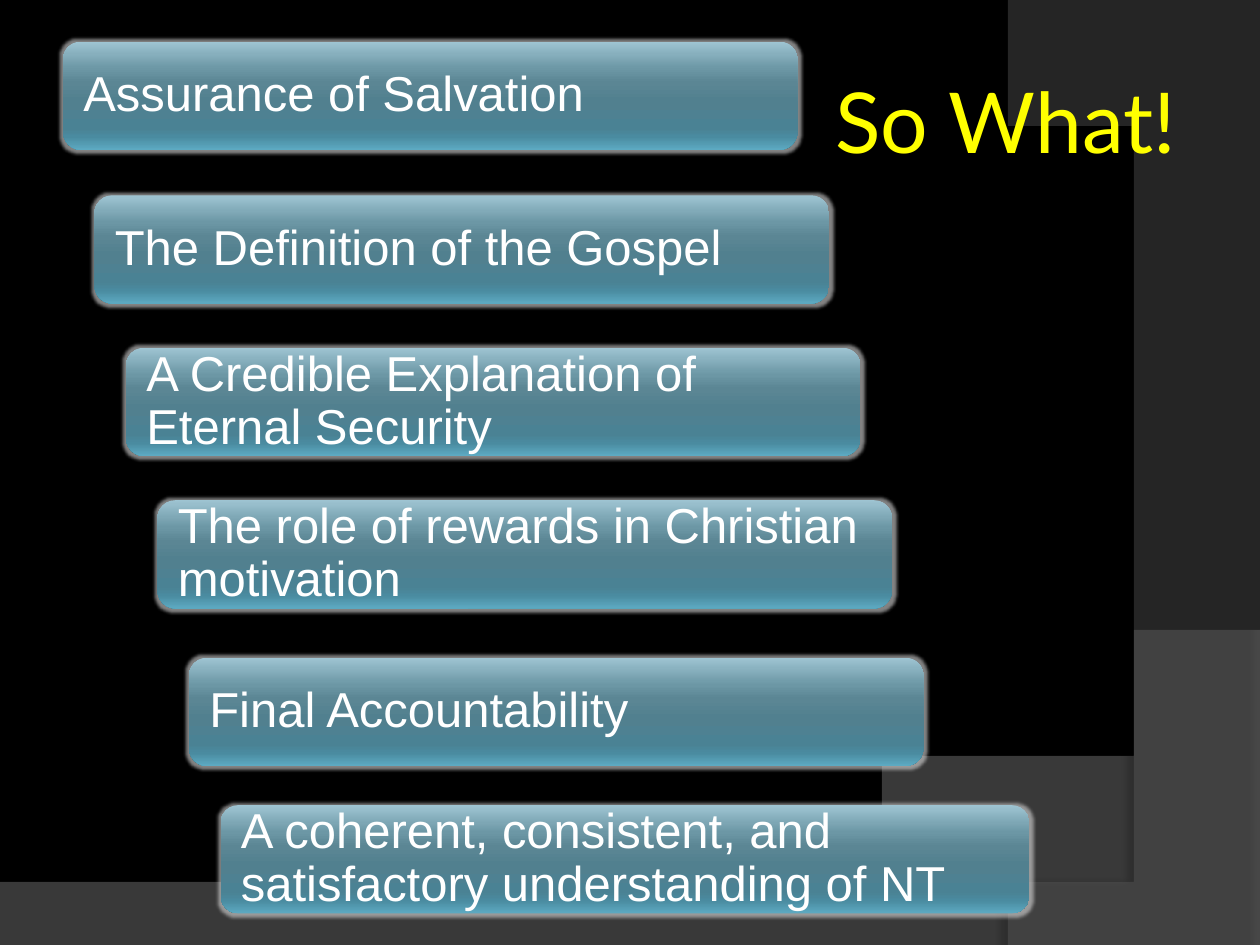
from lxml.etree import SubElement
from pptx import Presentation
from pptx.dml.color import RGBColor
from pptx.enum.shapes import MSO_SHAPE as Shape
from pptx.enum.text import MSO_ANCHOR as Anchor, PP_ALIGN as Align
from pptx.oxml.ns import qn
from pptx.util import Inches, Pt

WIDTH, HEIGHT = 10, 7.5

# Content: bar text, top, width
TITLE = "So What!"
BARS = [
    ("Assurance of Salvation", 0.33, 5.83),
    ("The Definition of the Gospel", 1.55, 5.83),
    ("A Credible Explanation of Eternal Security", 2.76, 5.83),
    ("The role of rewards in Christian motivation", 3.97, 5.83),
    ("Final Accountability", 5.22, 5.83),
    ("A coherent, consistent, and satisfactory understanding of NT", 6.39, 6.42),
]
FIRST_LEFT, STEP, BAR_HEIGHT = 0.5, 0.25, 0.86
BAR_STOPS = [(0, "9EC4D2"), (25, "6C97A5"), (38, "5B8694"), (55, "51808F"),
             (80, "4A8294"), (88, "4A8BA0"), (100, "5DAAC2")]

# Background swooshes: straight corners, then one curve of four control points
SWOOSHES = [
    dict(corners=[(0, 7.05), (0, 7.51), (10, 7.51)],
         curve=[(10, 5.2), (5.59, 7.29), (3.91, 7.19), (0, 7.05)],
         color="7F7F7F", opacity=45, shadow=dict(opacity=35, distance=3.5, angle=270)),
    dict(corners=[(8, 0), (10, 0.02), (10, 7.5)],
         curve=[(8.21, 7.5), (9.35, 6.19), (10.18, 3), (8, 0)],
         color="5E5E5E", opacity=40, shadow=dict(opacity=45, distance=4, angle=180)),
]


def rgb(color):
    return RGBColor.from_string(color)


def add_color(parent, color, opacity=100):
    node = SubElement(parent, qn("a:srgbClr"), val=color)
    if opacity < 100:
        SubElement(node, qn("a:alpha"), val=str(opacity * 1000))


def add_effect(shape, tag, color, opacity, **attributes):
    shape.shadow.inherit = False
    effects = shape._element.spPr.find(qn("a:effectLst"))
    values = {name: str(int(value)) for name, value in attributes.items()}
    add_color(SubElement(effects, qn(tag), **values), color, opacity)


def bezier(points, steps=60):
    for step in range(steps + 1):
        t = step / steps
        weights = ((1 - t) ** 3, 3 * t * (1 - t) ** 2, 3 * t * t * (1 - t), t ** 3)
        yield tuple(sum(w * point[axis] for w, point in zip(weights, points))
                    for axis in (0, 1))


def add_swoosh(page, corners, curve, color, opacity, shadow):
    outline = corners + list(bezier(curve))
    builder = page.shapes.build_freeform(*outline[0], scale=Inches(1))
    builder.add_line_segments(outline[1:], close=True)
    swoosh = builder.convert_to_shape()
    swoosh.line.fill.background()
    swoosh.fill.solid()
    swoosh.fill.fore_color.rgb = rgb(color)
    fill = swoosh._element.spPr.find(qn("a:solidFill"))
    fill.remove(fill[0])
    add_color(fill, color, opacity)
    add_effect(swoosh, "a:outerShdw", "000000", shadow["opacity"], blurRad=Pt(4),
               dist=Pt(shadow["distance"]), dir=shadow["angle"] * 60000)


def set_text(box, text, inset, spacing=1.0, **font):
    frame = box.text_frame
    settings = dict(word_wrap=True, vertical_anchor=Anchor.MIDDLE)
    sides = ("left", "top", "right", "bottom")
    settings.update({f"margin_{side}": Inches(inset) for side in sides})
    for name, value in settings.items():
        setattr(frame, name, value)
    para = frame.paragraphs[0]
    para.alignment, para.line_spacing = Align.LEFT, spacing
    span = para.add_run()
    span.text = text
    span.font.color.rgb = rgb(font.pop("color"))
    for name, value in font.items():
        setattr(span.font, name, value)


def add_bar(page, text, left, top, width):
    bar = page.shapes.add_shape(Shape.ROUNDED_RECTANGLE, Inches(left), Inches(top),
                                Inches(width), Inches(BAR_HEIGHT))
    bar.line.fill.background()
    bar.fill.gradient()
    bar.fill.gradient_angle = 270  # counted anticlockwise: top to bottom
    stops = bar._element.spPr.find(qn("a:gradFill")).find(qn("a:gsLst"))
    for stop in list(stops):
        stops.remove(stop)
    for position, color in BAR_STOPS:
        add_color(SubElement(stops, qn("a:gs"), pos=str(position * 1000)), color)
    add_effect(bar, "a:glow", "D9D9D9", 60, rad=Pt(4))
    set_text(bar, text, 0.12, 0.9, size=Pt(28), name="Arial", color="FFFFFF")


def main():
    deck = Presentation()
    deck.slide_width, deck.slide_height = Inches(WIDTH), Inches(HEIGHT)
    page = deck.slides.add_slide(deck.slide_layouts[6])
    page.background.fill.solid()
    page.background.fill.fore_color.rgb = rgb("000000")

    for swoosh in SWOOSHES:
        add_swoosh(page, **swoosh)

    # Title
    title = page.shapes.add_textbox(Inches(6.58), Inches(0.33), Inches(3.17), Inches(1.25))
    set_text(title, TITLE, 0.05, size=Pt(48), name="Lato", color="FFFF00")

    # Staircase of bars
    for index, (text, top, width) in enumerate(BARS):
        add_bar(page, text, FIRST_LEFT + index * STEP, top, width)

    deck.save("out.pptx")


if __name__ == "__main__":
    main()
